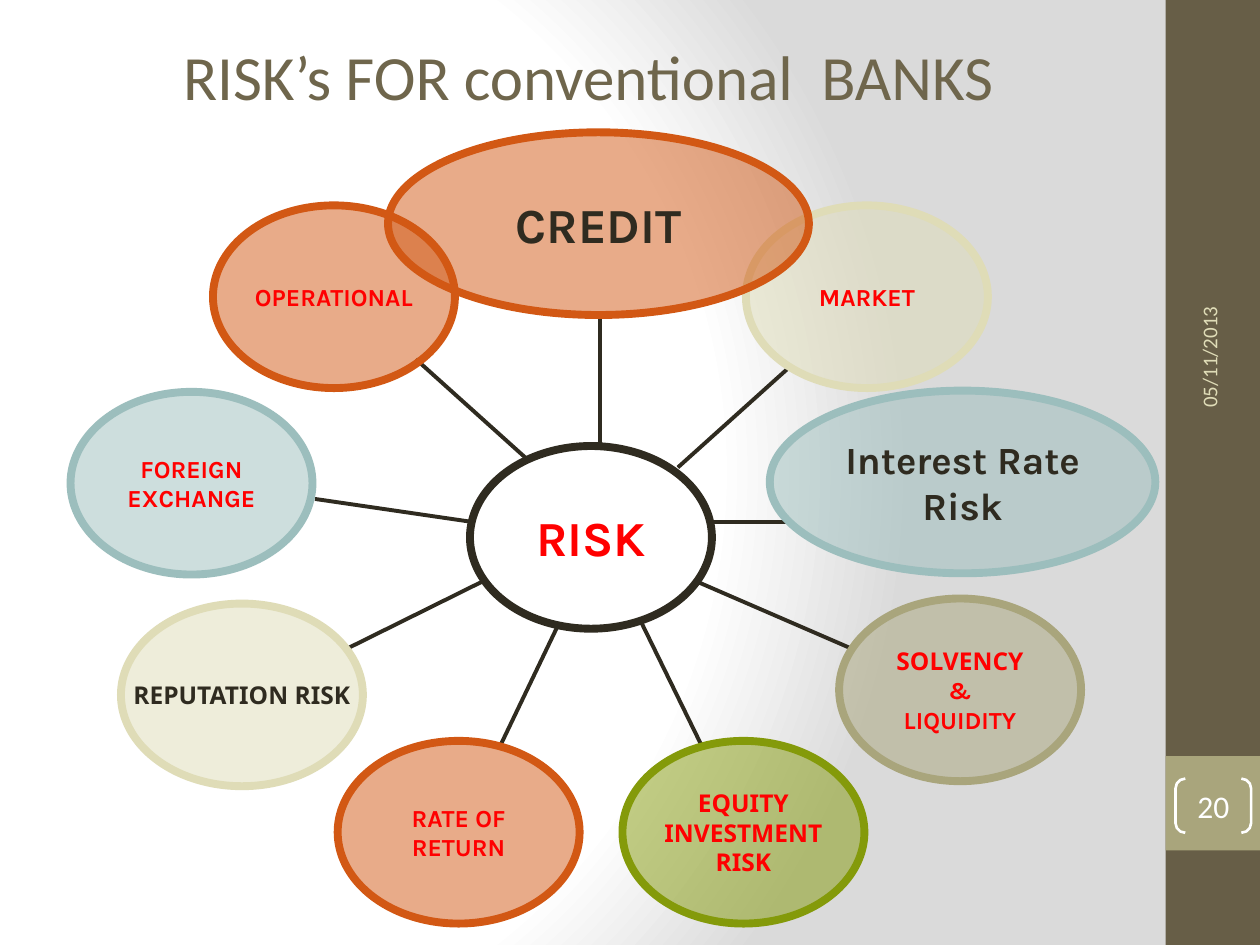
from pptx import Presentation
from pptx.dml.color import RGBColor
from pptx.enum.shapes import MSO_CONNECTOR, MSO_SHAPE as SHAPE
from pptx.enum.text import MSO_ANCHOR as ANCHOR, PP_ALIGN as ALIGN
from pptx.oxml import parse_xml
from pptx.oxml.ns import nsdecls
from pptx.oxml.xmlchemy import OxmlElement
from pptx.util import Inches, Pt

DARK, RED, WHITE = "2F2B20", "FF0000", "FFFFFF"
ORANGE, TEAL, CREAM, GREEN, OLIVE = "D25814", "9CBEBD", "DFDCB7", "849A0A", "A9A57C"
OVAL_W, OVAL_H = 1.92, 1.45

# label, colour, left, top, spoke start, spoke end, format
RISKS = [
    ("OPERATIONAL", ORANGE, 1.69, 1.63, (4.19, 3.65), (3.3, 2.85), {}),
    ("FOREIGN EXCHANGE", TEAL, 0.56, 3.11, (3.73, 4.14), (2.5, 3.96), {}),
    ("REPUTATION RISK", CREAM, 0.96, 4.79, (3.82, 4.62), (2.75, 5.15),
     dict(font="Noto Sans", color=DARK, wrap=False)),
    ("RATE OF RETURN", ORANGE, 2.68, 5.88, (4.44, 4.94), (3.97, 5.92), {}),
    ("EQUITY INVESTMENT RISK", GREEN, 4.94, 5.88, (5.09, 4.94), (5.57, 5.92),
     dict(font="Noto Sans")),
    ("SOLVENCY\n&\nLIQUIDITY", OLIVE, 6.66, 4.75, (5.54, 4.62), (6.74, 5.14),
     dict(first_font="Noto Sans")),
    ("Interest Rate Risk", TEAL, 6.11, 3.1, (5.67, 4.14), (6.27, 4.14),
     dict(width=3.06, size=22, color=DARK)),
    ("MARKET", CREAM, 5.92, 1.63, (5.38, 3.71), (6.27, 2.91), {}),
    ("CREDIT", ORANGE, 3.08, 1.05, (4.76, 3.54), (4.76, 2.5),
     dict(width=3.34, size=28, color=DARK)),
]


def rgb(value):
    """Return the colour for a hex string."""
    return RGBColor.from_string(value)


def write(sp, text, size=14, font="Karla", first_font=None, color=RED, bold=False,
          align=ALIGN.CENTER, anchor=ANCHOR.MIDDLE, wrap=True, inset=None):
    """Write text into a shape, one paragraph a line."""
    tf = sp.text_frame
    tf.word_wrap, tf.vertical_anchor = wrap, anchor
    if inset is not None:
        tf.margin_left = tf.margin_right = tf.margin_top = tf.margin_bottom = Inches(inset)
    for i, line in enumerate(text.split("\n")):
        p = tf.add_paragraph() if i else tf.paragraphs[0]
        p.alignment = align
        r = p.add_run()
        r.text = line
        r.font.name = first_font if first_font and i == 0 else font
        r.font.size, r.font.bold = Pt(size), bold
        r.font.color.rgb = rgb(color)


def add_shape(s, kind, box, fill=None, line=None, width=1, alpha=None):
    """Add a preset shape with optional fill, outline and opacity in percent."""
    sp = s.shapes.add_shape(kind, *map(Inches, box))
    sp.shadow.inherit = False
    if fill:
        sp.fill.solid()
        sp.fill.fore_color.rgb = rgb(fill)
    else:
        sp.fill.background()
    if alpha:
        node = OxmlElement("a:alpha")
        node.set("val", str(alpha * 1000))
        sp.fill._xPr.solidFill[0].append(node)
    if line:
        sp.line.color.rgb = rgb(line)
        sp.line.width = Pt(width)
    else:
        sp.line.fill.background()
    return sp


def add_oval(s, text, left, top, fill, line, width=OVAL_W, **fmt):
    """Add a half-transparent labelled oval."""
    sp = add_shape(s, SHAPE.OVAL, (left, top, width, OVAL_H), fill, line, 4.5, alpha=50)
    write(sp, text, bold=True, inset=0, **fmt)


def add_spoke(s, start, end):
    """Add a straight line out from the hub."""
    line = s.shapes.add_connector(MSO_CONNECTOR.STRAIGHT, *map(Inches, start + end))
    line.line.color.rgb = rgb(DARK)
    line.line.width = Pt(2.25)
    line._element.spPr.append(OxmlElement("a:effectLst"))


def add_background(s):
    """Give the slide a radial gradient from white to grey."""
    stops = "".join(
        f'<a:gs pos="{pos * 1000}"><a:srgbClr val="{color}"/></a:gs>'
        for pos, color in ((0, WHITE), (75, WHITE), (100, "DADADA")))
    bg = parse_xml(
        f'<p:bg {nsdecls("p", "a")}><p:bgPr><a:gradFill rotWithShape="1">'
        f'<a:gsLst>{stops}</a:gsLst><a:path path="circle">'
        '<a:fillToRect l="20000" t="50000" r="100000" b="50000"/></a:path>'
        '</a:gradFill><a:effectLst/></p:bgPr></p:bg>')
    s._element.cSld.insert(0, bg)


def add_sidebar(s, left, top, width, height):
    """Draw the side band with its page number and date."""
    add_shape(s, SHAPE.RECTANGLE, (left, top, width, height), "675E47")
    add_shape(s, SHAPE.RECTANGLE, (left, top + 6, width, width), OLIVE)
    sp = add_shape(s, SHAPE.DOUBLE_BRACKET, (left + 0.08, top + 6.18, 0.6, 0.43),
                   line=WHITE, width=1.5)
    sp.adjustments[0] = 0.18
    write(sp, "20", size=18, font="Calibri", color=WHITE, inset=0)
    date = s.shapes.add_textbox(*map(Inches, (left - 0.99, top + 1.8, 2.67, 0.4)))
    date.rotation = 270
    write(date, "05/11/2013", size=12, font="Calibri", color=CREAM, align=ALIGN.LEFT)


def add_title(s, *box):
    """Place the slide title."""
    sp = s.shapes.add_textbox(*map(Inches, box))
    write(sp, "RISK’s FOR conventional  BANKS", size=36, font="Calibri",
          color="6F664C", anchor=ANCHOR.TOP)


def add_risk_wheel(s, left, top):
    """Draw the hub and the risks around it, offset by left and top."""
    for text, color, x, y, start, end, fmt in RISKS:
        add_spoke(s, *((px + left, py + top) for px, py in (start, end)))
        add_oval(s, text, x + left, y + top, color, color, **fmt)
    add_oval(s, "RISK", left + 3.73, top + 3.54, WHITE, DARK, size=28)


def main():
    """Build and save the slide."""
    prs = Presentation()
    prs.slide_width, prs.slide_height = Inches(10), Inches(7.5)
    s = prs.slides.add_slide(prs.slide_layouts[6])
    add_background(s)
    add_sidebar(s, 9.25, 0, 0.75, 7.5)
    add_title(s, 0.17, 0.25, 9, 1)
    add_risk_wheel(s, 0, 0)
    prs.save("out.pptx")


if __name__ == "__main__":
    main()
